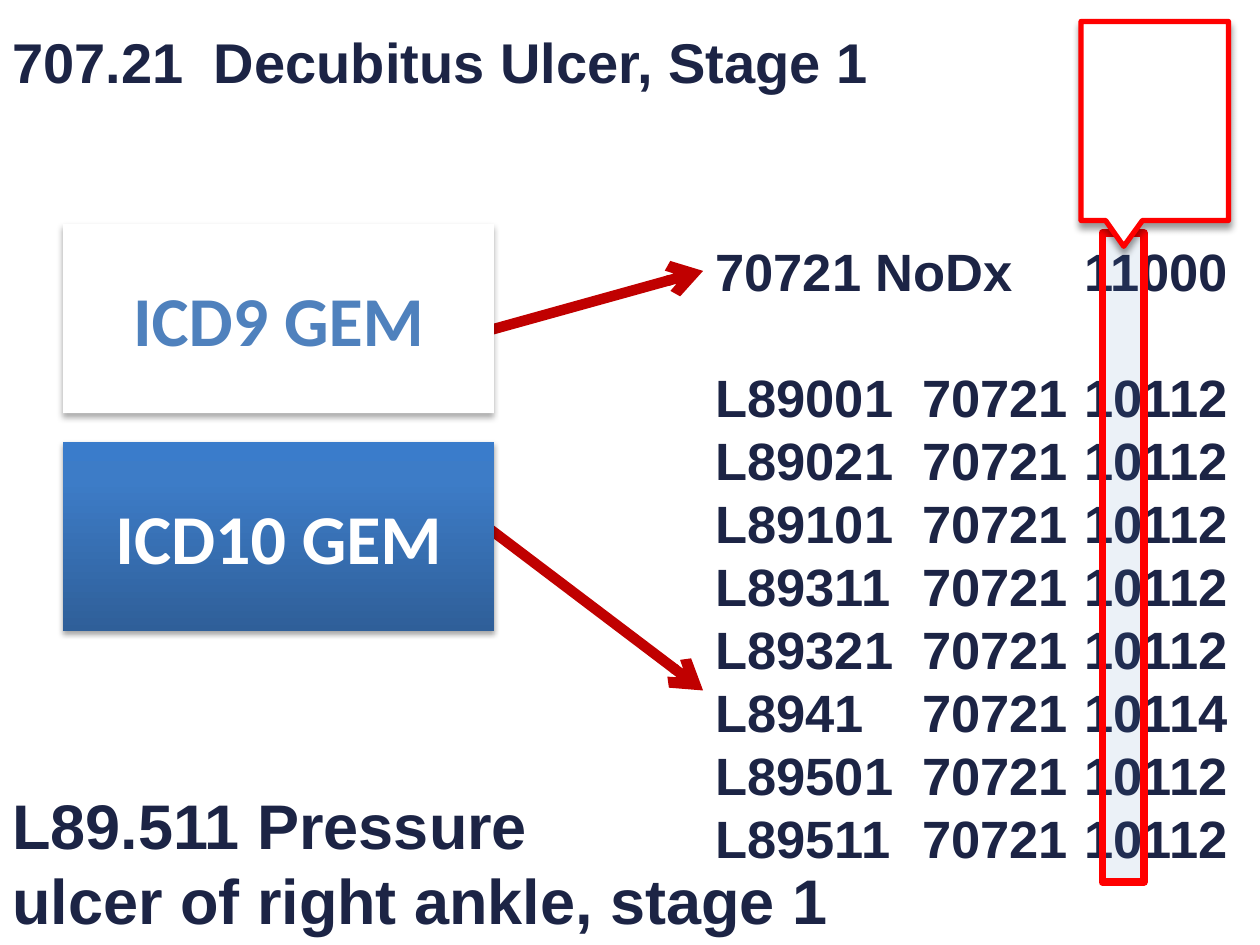
from dataclasses import dataclass
from lxml.etree import SubElement
from pptx import Presentation
from pptx.dml.color import RGBColor
from pptx.enum.shapes import MSO_CONNECTOR, MSO_SHAPE
from pptx.enum.text import MSO_ANCHOR, PP_ALIGN
from pptx.oxml.ns import qn
from pptx.util import Inches, Pt


@dataclass
class Theme:
    ink: str = "1C2445"
    blue: str = "4F81BD"
    white: str = "FFFFFF"
    red: str = "FF0000"
    dark: str = "C00000"
    fade: tuple = ((0, "2F5F99"), (80, "3D7CC7"), (100, "3A7CCB"))
    body: str = "Arial"
    label: str = "Calibri"
    title: int = 32
    code: int = 30
    note: int = 36
    box: int = 40


def node(root, tag, **attrs):
    return SubElement(root, qn(tag), {k: str(v) for k, v in attrs.items()})


class Deck:
    def __init__(self, theme):
        self.theme = theme
        self.file = Presentation()
        self.file.slide_width, self.file.slide_height = Inches(10), Inches(7.5)
        self.slide = self.file.slides.add_slide(self.file.slide_layouts[6])

    def run(self, para, text, size, color, face):
        run = para.add_run()
        run.text = text
        font = run.font
        font.size, font.bold, font.name = Pt(size), True, face
        font.color.rgb = RGBColor.from_string(color)

    def text(self, at, lines, size, tabs=(), gaps=None):
        """Lines of text; gaps maps a line number to its space before."""
        frame = self.slide.shapes.add_textbox(*map(Inches, at)).text_frame
        frame.word_wrap = True
        for i, line in enumerate(lines):
            para = frame.add_paragraph() if i else frame.paragraphs[0]
            if gaps and i in gaps:
                para.space_before = Pt(gaps[i])
            if tabs:
                stops = node(para._p.get_or_add_pPr(), "a:tabLst")
                for tab in tabs:
                    node(stops, "a:tab", pos=Inches(tab), algn="l")
            self.run(para, line, size, self.theme.ink, self.theme.body)

    def shape(self, kind, at, fill, line=None, width=0, alpha=None):
        shape = self.slide.shapes.add_shape(kind, *map(Inches, at))
        shape.shadow.inherit = False
        shape.fill.solid()
        shape.fill.fore_color.rgb = RGBColor.from_string(fill)
        if alpha:
            color = shape._element.spPr.find(".//" + qn("a:srgbClr"))
            node(color, "a:alpha", val=alpha * 1000)
        if line:
            shape.line.color.rgb = RGBColor.from_string(line)
            shape.line.width = Pt(width)
        else:
            shape.line.fill.background()
        return shape

    def shade(self, shape, alpha, blur, dist):
        effect = shape._element.spPr.find(qn("a:effectLst"))
        outer = node(effect, "a:outerShdw", blurRad=Pt(blur), dist=Pt(dist),
                     dir=5400000, rotWithShape=0)
        color = node(outer, "a:srgbClr", val="000000")
        node(color, "a:alpha", val=alpha * 1000)

    def fade(self, shape):
        shape.fill.gradient()
        shape.fill.gradient_angle = 90
        stops = shape._element.spPr.find(".//" + qn("a:gsLst"))
        for stop in list(stops):
            stops.remove(stop)
        for pos, color in self.theme.fade:
            node(node(stops, "a:gs", pos=pos * 1000), "a:srgbClr", val=color)

    def box(self, at, text, color):
        shape = self.shape(MSO_SHAPE.RECTANGLE, at, self.theme.white)
        frame = shape.text_frame
        frame.vertical_anchor = MSO_ANCHOR.MIDDLE
        para = frame.paragraphs[0]
        para.alignment = PP_ALIGN.CENTER
        self.run(para, text, self.theme.box, color, self.theme.label)
        return shape

    def arrow(self, start, end):
        line = self.slide.shapes.add_connector(
            MSO_CONNECTOR.STRAIGHT, *map(Inches, start + end))
        line.line.color.rgb = RGBColor.from_string(self.theme.dark)
        line.line.width = Pt(6)
        node(line.line._get_or_add_ln(), "a:tailEnd", type="arrow")
        node(line._element.spPr, "a:effectLst")


def main():
    theme = Theme()
    deck = Deck(theme)

    # Target code and mapping rows
    deck.text((0, 6.19, 9.75, 1.31),
              ["L89.511 Pressure", "ulcer of right ankle, stage 1"], theme.note)
    flags = {"L8941": "10114"}
    codes = ["L89001", "L89021", "L89101", "L89311", "L89321", "L8941",
             "L89501", "L89511"]
    rows = ["70721 NoDx\t11000"]
    rows += [f"{code}\t70721\t{flags.get(code, '10112')}" for code in codes]
    deck.text((5.58, 1.85, 5, 5.15), rows, theme.code,
              tabs=(1.64, 2.93), gaps={1: 36})

    # Marked flag column and its callout
    deck.shape(MSO_SHAPE.RECTANGLE, (8.75, 1.85, 0.33, 5.15), theme.blue,
               theme.red, 4.5, alpha=11)
    call = deck.shape(MSO_SHAPE.RECTANGULAR_CALLOUT, (8.58, 0.17, 1.17, 1.58),
                      theme.white, theme.red, 3)
    call.adjustments[0], call.adjustments[1] = -0.21, 0.63
    deck.shade(call, 40, 4, 3)

    # Mapping files, each over the start of its arrow
    deck.arrow((3.4, 3.83), (5.58, 5.48))
    ten = deck.box((0.5, 3.51, 3.42, 1.5), "ICD10 GEM", theme.white)
    deck.fade(ten)
    deck.shade(ten, 35, 3.1, 1.8)
    deck.arrow((3.42, 2.75), (5.58, 2.15))
    nine = deck.box((0.5, 1.78, 3.42, 1.5), "ICD9 GEM", theme.blue)
    deck.shade(nine, 32, 3.5, 2.2)

    # Title
    deck.text((0, 0.17, 9.17, 0.64),
              ["707.21\tDecubitus Ulcer, Stage 1"], theme.title, tabs=(1.6,))

    deck.file.save("out.pptx")


if __name__ == "__main__":
    main()
